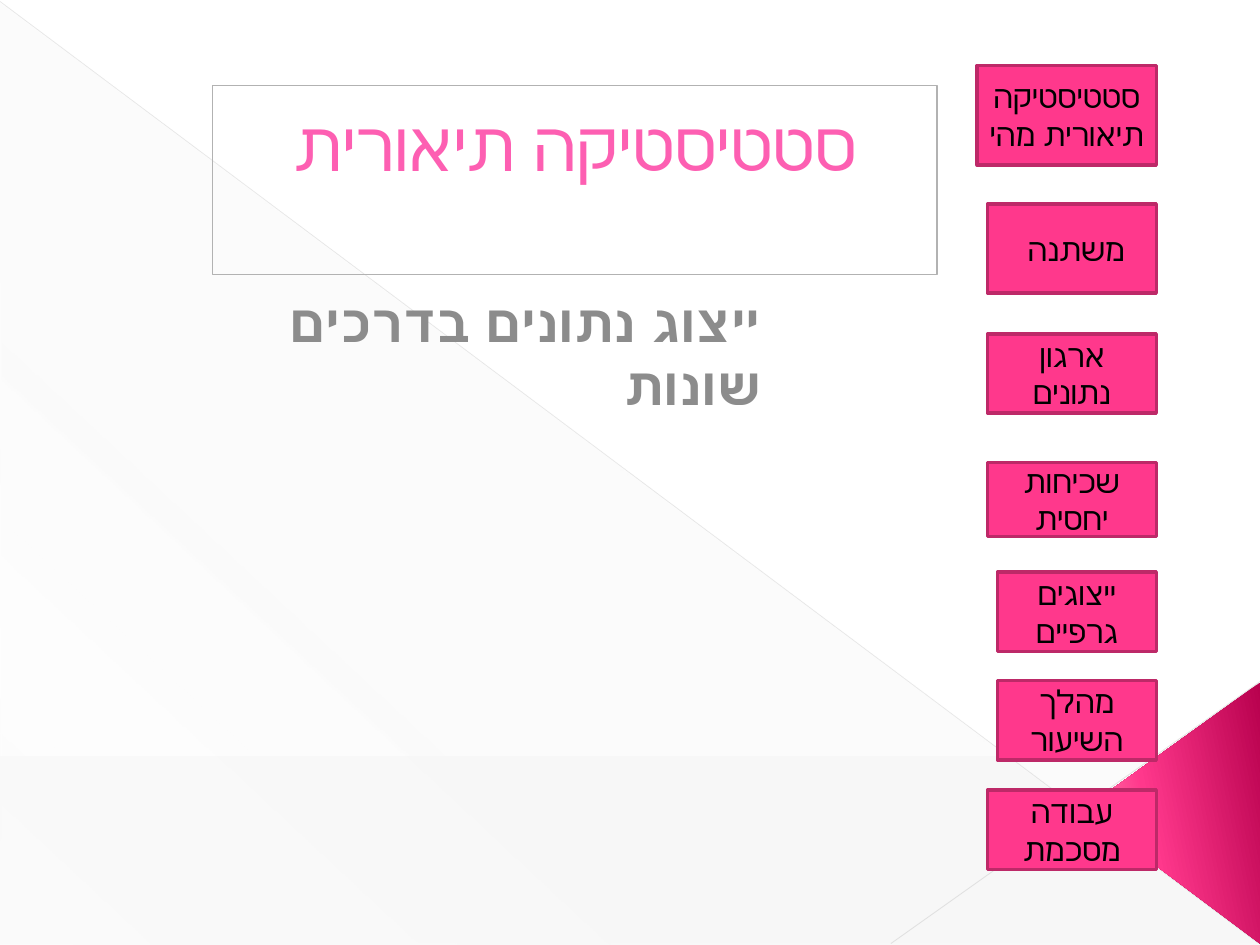
from lxml import etree
from pptx import Presentation
from pptx.dml.color import RGBColor
from pptx.enum import shapes, text
from pptx.oxml.ns import qn
from pptx.util import Cm, Pt

FONT = "TeX Gyre Adventor"


def rgb(value):
    return RGBColor.from_string(value)


def set_gradient(properties, stops, angle):
    """Replace the solid fill in properties by stops of (position, colour, opacity) in percent."""
    solid = properties.find(qn("a:solidFill"))
    gradient = etree.Element(qn("a:gradFill"), rotWithShape="1")
    stop_list = etree.SubElement(gradient, qn("a:gsLst"))
    for position, colour, opacity in stops:
        stop = etree.SubElement(stop_list, qn("a:gs"), pos=str(position * 1000))
        color = etree.SubElement(stop, qn("a:srgbClr"), val=colour)
        if opacity < 100:
            etree.SubElement(color, qn("a:alpha"), val=str(opacity * 1000))
    etree.SubElement(gradient, qn("a:lin"), ang=str(angle * 60000), scaled="0")
    properties.replace(solid, gradient)


prs = Presentation()
prs.slide_width, prs.slide_height = Cm(25.4), Cm(19.05)
slide = prs.slides.add_slide(prs.slide_layouts[5])

# Background and decoration
slide.background.fill.solid()
slide.background.fill.fore_color.rgb = rgb("FFFFFF")
set_gradient(slide.element.find(".//" + qn("p:bgPr")),
             [(0, "FFFFFF", 100), (60, "FFFFFF", 100), (100, "FBFBFB", 100)], 90)

veil = slide.shapes.add_shape(shapes.MSO_SHAPE.RIGHT_TRIANGLE,
                              Cm(0.02), Cm(0.05), Cm(25.37), Cm(19))
veil_stops = [(0, "D2D2D2", 10), (70, "D2D2D2", 8), (100, "D2D2D2", 1)]

for x1, y1, x2, y2, colour, width, opacity in [
    (0, 0.03, 25.37, 19.02, "BFBFBF", 0.39, 35),
    (25.4, 13.74, 17.96, 19.02, "C6C6C6", 0.47, 45),
]:
    crease = slide.shapes.add_connector(shapes.MSO_CONNECTOR.STRAIGHT,
                                        Cm(x1), Cm(y1), Cm(x2), Cm(y2))
    crease.line.color.rgb = rgb(colour)
    crease.line.width = Pt(width)
    color = crease.element.spPr.find(".//" + qn("a:srgbClr"))
    etree.SubElement(color, qn("a:alpha"), val=str(opacity * 1000))
    etree.SubElement(crease.element.spPr, qn("a:effectLst"))

corner = slide.shapes.add_shape(shapes.MSO_SHAPE.ISOSCELES_TRIANGLE,
                                Cm(20.98), Cm(14.6), Cm(5.26), Cm(3.58))
corner.rotation = 270
corner.adjustments[0] = 0.51
corner_stops = [(0, "B8014E", 100), (60, "FF388C", 100), (100, "FF9CB9", 100)]

for triangle, stops, angle in [(veil, veil_stops, 133), (corner, corner_stops, 258)]:
    triangle.shadow.inherit = False
    triangle.line.fill.background()
    triangle.fill.solid()
    triangle.fill.fore_color.rgb = rgb("FFFFFF")
    set_gradient(triangle.element.spPr, stops, angle)

# Title, brought in front of the decoration
title = slide.shapes.title
title.element.getparent().append(title.element)
title.left, title.top, title.width, title.height = Cm(4.29), Cm(1.73), Cm(14.6), Cm(3.81)
title.line.color.rgb = rgb("B2B2B2")
title.line.width = Pt(0.75)
title.text_frame.text = "סטטיסטיקה תיאורית\v"
title.text_frame.auto_size = text.MSO_AUTO_SIZE.NONE
title.text_frame.vertical_anchor = text.MSO_ANCHOR.BOTTOM
heading = title.text_frame.paragraphs[0]

subtitle = slide.shapes.add_textbox(Cm(4.7), Cm(5.72), Cm(10.9), Cm(9.73))
subtitle.text_frame.word_wrap = True
subtitle.text_frame.text = "ייצוג נתונים בדרכים שונות"
subheading = subtitle.text_frame.paragraphs[0]
subheading.font.bold = True

RIGHT = text.PP_ALIGN.RIGHT
styled = [(heading, RIGHT, 39.6, "FD5FB2"), (subheading, RIGHT, 30, "8C8C8C")]

# Navigation buttons, aligned on their right edge
buttons_right = 23.31
for label, top, width, height in [
    ("סטטיסטיקה תיאורית מהי", 1.32, 3.61, 2.01),
    ("משתנה ", 4.11, 3.4, 1.8),
    ("ארגון נתונים", 6.73, 3.4, 1.6),
    ("שכיחות יחסית", 9.32, 3.4, 1.5),
    ("ייצוגים גרפיים", 11.53, 3.2, 1.6),
    ("מהלך השיעור", 13.72, 3.2, 1.6),
    ("עבודה מסכמת", 15.93, 3.4, 1.6),
]:
    button = slide.shapes.add_shape(shapes.MSO_SHAPE.ACTION_BUTTON_CUSTOM,
                                    Cm(buttons_right - width), Cm(top), Cm(width), Cm(height))
    button.shadow.inherit = False
    button.fill.solid()
    button.fill.fore_color.rgb = rgb("FF388C")
    button.line.color.rgb = rgb("BD2968")
    button.line.width = Pt(2)
    button.text_frame.text = label
    button.text_frame.vertical_anchor = text.MSO_ANCHOR.MIDDLE
    styled.append((button.text_frame.paragraphs[0], text.PP_ALIGN.CENTER, 18, "000000"))

# Right-to-left text; Hebrew takes the complex-script typeface
for paragraph, alignment, size, colour in styled:
    paragraph.alignment = alignment
    paragraph.font.name = FONT
    paragraph.font.size = Pt(size)
    paragraph.font.color.rgb = rgb(colour)
    properties = paragraph._p.get_or_add_pPr()
    properties.set("rtl", "1")
    etree.SubElement(properties.find(qn("a:defRPr")), qn("a:cs"), typeface=FONT)
heading._p.get_or_add_pPr().set("marL", str(Cm(1.35)))

prs.save("out.pptx")
